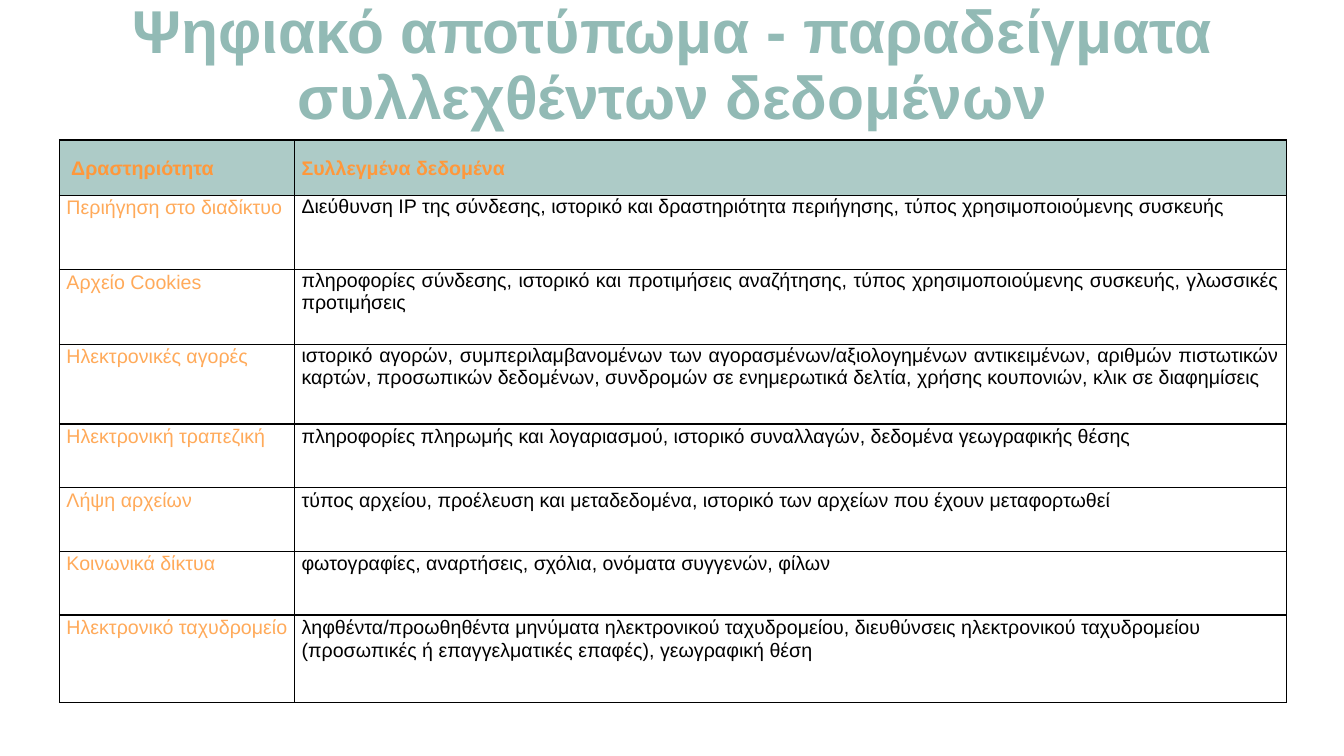
from dataclasses import dataclass

from lxml import etree
from pptx import Presentation
from pptx.dml.color import RGBColor
from pptx.enum.text import MSO_ANCHOR, MSO_AUTO_SIZE, PP_ALIGN
from pptx.oxml.ns import qn
from pptx.util import Pt

LEFT, CENTER, JUSTIFY = PP_ALIGN.LEFT, PP_ALIGN.CENTER, PP_ALIGN.JUSTIFY
TOP, MIDDLE = MSO_ANCHOR.TOP, MSO_ANCHOR.MIDDLE
NO_AUTOFIT = MSO_AUTO_SIZE.NONE
TITLE_ONLY = 5


@dataclass(frozen=True)
class Theme:
    font: str = "Arial"
    title_size: float = 43.2
    table_size: float = 14
    teal: str = "92BAB5"
    header_text: str = "FF983B"
    activity_text: str = "FFAA5A"
    black: str = "000000"
    white: str = "FFFFFF"
    header_opacity: int = 75
    border_width: float = 1


THEME = Theme()

TITLE = "Ψηφιακό αποτύπωμα - παραδείγματα συλλεχθέντων δεδομένων"
HEADINGS = (" Δραστηριότητα", "Συλλεγμένα δεδομένα")
HEADER_HEIGHT = 39.6
COLUMN_WIDTHS = (167.9, 708.3)

# Activity, collected data, row height, whether the data is justified
ACTIVITIES = [
    ("Περιήγηση στο διαδίκτυο",
     "Διεύθυνση IP της σύνδεσης, ιστορικό και δραστηριότητα περιήγησης, "
     "τύπος χρησιμοποιούμενης συσκευής", 53.2, True),
    ("Αρχείο Cookies",
     "πληροφορίες σύνδεσης, ιστορικό και προτιμήσεις αναζήτησης, "
     "τύπος χρησιμοποιούμενης συσκευής, γλωσσικές προτιμήσεις", 53.2, True),
    ("Ηλεκτρονικές αγορές",
     "ιστορικό αγορών, συμπεριλαμβανομένων των αγορασμένων/αξιολογημένων "
     "αντικειμένων, αριθμών πιστωτικών καρτών, προσωπικών δεδομένων, "
     "συνδρομών σε ενημερωτικά δελτία, χρήσης κουπονιών, κλικ σε διαφημίσεις",
     56.9, True),
    ("Ηλεκτρονική τραπεζική",
     "πληροφορίες πληρωμής και λογαριασμού, ιστορικό συναλλαγών, "
     "δεδομένα γεωγραφικής θέσης", 45.5, False),
    ("Λήψη αρχείων",
     "τύπος αρχείου, προέλευση και μεταδεδομένα, ιστορικό των αρχείων "
     "που έχουν μεταφορτωθεί", 45.5, False),
    ("Κοινωνικά δίκτυα",
     "φωτογραφίες, αναρτήσεις, σχόλια, ονόματα συγγενών, φίλων", 45.5, False),
    ("Ηλεκτρονικό ταχυδρομείο",
     "ληφθέντα/προωθηθέντα μηνύματα ηλεκτρονικού ταχυδρομείου, διευθύνσεις "
     "ηλεκτρονικού ταχυδρομείου (προσωπικές ή επαγγελματικές επαφές), "
     "γεωγραφική θέση", 62.6, False),
]


def write_text(frame, text, *, size, color, bold=False, align=LEFT, spacing=1.0):
    paragraph = frame.paragraphs[0]
    paragraph.alignment = align
    paragraph.line_spacing = spacing
    run = paragraph.add_run()
    run.text = text
    run.font.name = THEME.font
    run.font.size = Pt(size)
    run.font.bold = bold
    run.font.color.rgb = RGBColor.from_string(color)


def style_cell(cell, fill, opacity=100, anchor=TOP):
    cell.vertical_anchor = anchor
    cell.margin_left = cell.margin_right = Pt(5)
    cell.margin_top = cell.margin_bottom = Pt(0)
    cell.fill.solid()
    cell.fill.fore_color.rgb = RGBColor.from_string(fill)
    properties = cell._tc.get_or_add_tcPr()
    if opacity < 100:
        fill_color = properties.find(qn("a:solidFill")).find(qn("a:srgbClr"))
        etree.SubElement(fill_color, qn("a:alpha"), val=str(opacity * 1000))
    # Borders precede the fill
    for position, side in enumerate(("a:lnL", "a:lnR", "a:lnT", "a:lnB")):
        border = etree.Element(qn(side), w=str(Pt(THEME.border_width)))
        line_fill = etree.SubElement(border, qn("a:solidFill"))
        etree.SubElement(line_fill, qn("a:srgbClr"), val=THEME.black)
        properties.insert(position, border)


def place_title(slide, left, top, width, height):
    title = slide.shapes.title
    title.left, title.top = Pt(left), Pt(top)
    title.width, title.height = Pt(width), Pt(height)
    frame = title.text_frame
    frame.word_wrap = True
    frame.auto_size = NO_AUTOFIT
    frame.vertical_anchor = MIDDLE
    write_text(frame, TITLE, size=THEME.title_size, color=THEME.teal,
               bold=True, align=CENTER, spacing=0.9)


def place_activity_table(slide, left, top, width, height):
    table = slide.shapes.add_table(
        len(ACTIVITIES) + 1, len(HEADINGS),
        Pt(left), Pt(top), Pt(width), Pt(height)).table
    table.horz_banding = False
    for column, column_width in zip(table.columns, COLUMN_WIDTHS):
        column.width = Pt(column_width)

    # Header row
    table.rows[0].height = Pt(HEADER_HEIGHT)
    for column, heading in enumerate(HEADINGS):
        cell = table.cell(0, column)
        style_cell(cell, THEME.teal, THEME.header_opacity, MIDDLE)
        write_text(cell.text_frame, heading, size=THEME.table_size,
                   color=THEME.header_text, bold=True, spacing=1.07)

    # Activity rows
    for row, (activity, collected, row_height, justified) in enumerate(ACTIVITIES, 1):
        table.rows[row].height = Pt(row_height)
        activity_cell, data_cell = table.cell(row, 0), table.cell(row, 1)
        style_cell(activity_cell, THEME.white)
        style_cell(data_cell, THEME.white)
        write_text(activity_cell.text_frame, activity, size=THEME.table_size,
                   color=THEME.activity_text, spacing=1.07)
        write_text(data_cell.text_frame, collected, size=THEME.table_size,
                   color=THEME.black, align=JUSTIFY if justified else LEFT,
                   spacing=1.0 if justified else 1.07)


def main():
    deck = Presentation()
    deck.slide_width, deck.slide_height = Pt(960), Pt(540)
    slide = deck.slides.add_slide(deck.slide_layouts[TITLE_ONLY])
    place_title(slide, 30.2, 15.1, 900.7, 65.5)
    table_height = HEADER_HEIGHT + sum(row_height for _, _, row_height, _ in ACTIVITIES)
    place_activity_table(slide, 42.5, 100, sum(COLUMN_WIDTHS), table_height)
    deck.save("out.pptx")


if __name__ == "__main__":
    main()
